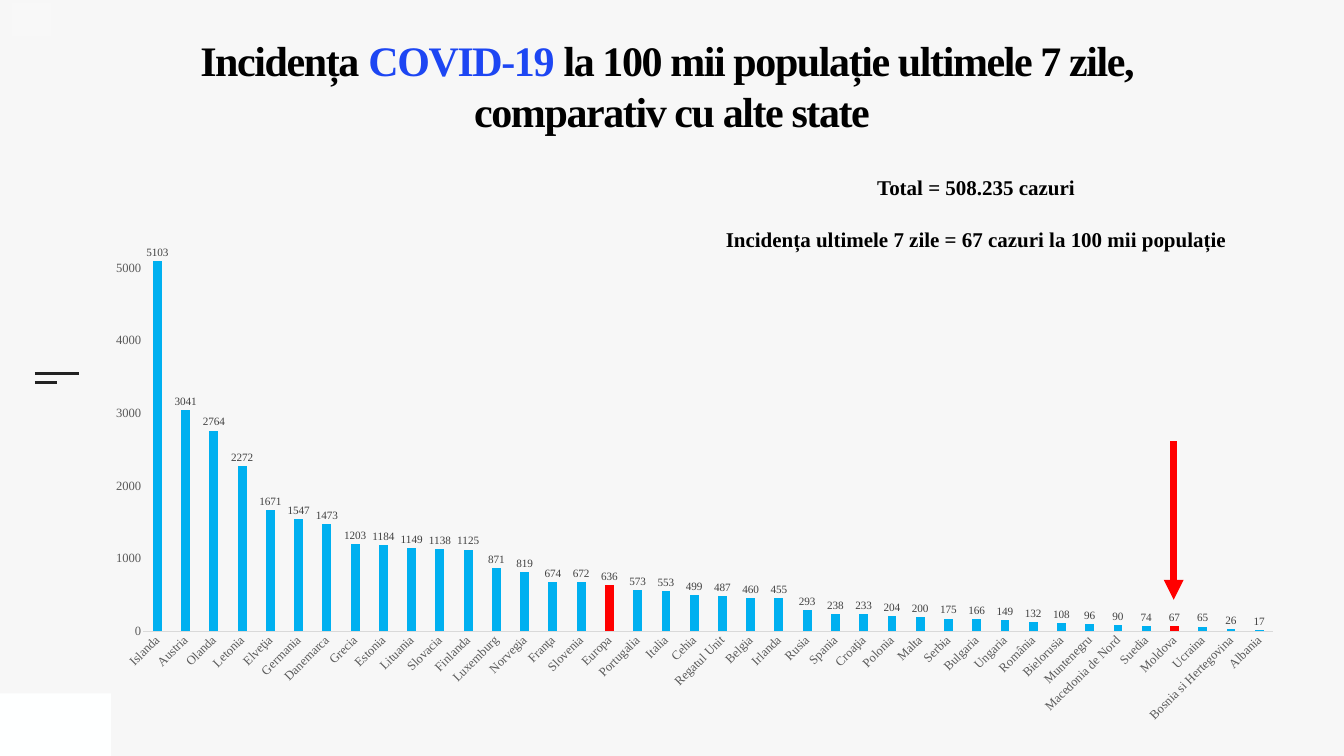
from lxml import etree
from pptx import Presentation
from pptx import util as u
from pptx.chart import data as chart_data
from pptx.dml.color import RGBColor
from pptx.enum import chart as ch, shapes, text
from pptx.oxml import parse_xml
from pptx.oxml.ns import nsdecls, qn

INCIDENCE = {
    "Islanda": 5103, "Austria": 3041, "Olanda": 2764, "Letonia": 2272,
    "Elveţia": 1671, "Germania": 1547, "Danemarca": 1473, "Grecia": 1203,
    "Estonia": 1184, "Lituania": 1149, "Slovacia": 1138, "Finlanda": 1125,
    "Luxemburg": 871, "Norvegia": 819, "Franţa": 674, "Slovenia": 672,
    "Europa": 636, "Portugalia": 573, "Italia": 553, "Cehia": 499,
    "Regatul Unit": 487, "Belgia": 460, "Irlanda": 455, "Rusia": 293,
    "Spania": 238, "Croaţia": 233, "Polonia": 204, "Malta": 200,
    "Serbia": 175, "Bulgaria": 166, "Ungaria": 149, "România": 132,
    "Bielorusia": 108, "Muntenegru": 96, "Macedonia de Nord": 90,
    "Suedia": 74, "Moldova": 67, "Ucraina": 65,
    "Bosnia si Hertegovina": 26, "Albania": 17,
}
HIGHLIGHTED = ("Europa", "Moldova")


def color(value):
    return RGBColor.from_string(value)


class SlideBuilder:
    font_name = "Times New Roman"
    black, blue, red, bar_blue = "000000", "1D46F3", "FF0000", "00B0F0"

    def __init__(self, slide, background):
        self.slide = slide
        fill = slide.background.fill
        fill.solid()
        fill.fore_color.rgb = color(background)

    def style(self, font, size, value, bold=False):
        font.name = self.font_name
        font.size = u.Pt(size)
        font.bold = bold
        font.color.rgb = color(value)

    def rectangle(self, left, top, width, height, fill):
        box = self.slide.shapes.add_shape(
            shapes.MSO_SHAPE.RECTANGLE, *map(u.Inches, (left, top, width, height)))
        box.shadow.inherit = False
        box.fill.solid()
        box.fill.fore_color.rgb = color(fill)
        box.line.fill.background()

    def line(self, start, end, value, width, arrow=False):
        connector = self.slide.shapes.add_connector(
            shapes.MSO_CONNECTOR.STRAIGHT, *map(u.Inches, (*start, *end)))
        connector.line.color.rgb = color(value)
        connector.line.width = u.Pt(width)
        if arrow:
            outline = connector.line._get_or_add_ln()
            etree.SubElement(outline, qn("a:tailEnd"), type="triangle")
        etree.SubElement(connector._element.spPr, qn("a:effectLst"))

    def text_box(self, left, top, width, height, paragraphs, size, margin=0,
                 anchor=text.MSO_ANCHOR.TOP, spacing=None, gap=0, tracking=0):
        box = self.slide.shapes.add_textbox(*map(u.Inches, (left, top, width, height)))
        frame = box.text_frame
        frame.word_wrap = True
        frame.vertical_anchor = anchor
        frame.margin_left = frame.margin_right = u.Inches(margin)
        frame.margin_top = frame.margin_bottom = u.Inches(margin)
        for index, lines in enumerate(paragraphs):
            para = frame.add_paragraph() if index else frame.paragraphs[0]
            para.alignment = text.PP_ALIGN.CENTER
            if spacing:
                para.line_spacing = u.Pt(spacing)
            if index:
                para.space_before = u.Pt(gap)
            for number, spans in enumerate(lines):
                if number:
                    para.add_line_break()
                for words, value in spans:
                    span = para.add_run()
                    span.text = words
                    self.style(span.font, size, value, bold=True)
                    if tracking:
                        span.font._element.set("spc", str(tracking * 100))

    def column_chart(self, left, top, width, height, values, highlighted, plot_area):
        data = chart_data.CategoryChartData(number_format="0")
        data.categories = list(values)
        data.add_series("Series 1", list(values.values()))
        chart = self.slide.shapes.add_chart(
            ch.XL_CHART_TYPE.COLUMN_CLUSTERED,
            *map(u.Inches, (left, top, width, height)), data).chart
        chart.has_legend = False
        chart.has_title = False
        self.style(chart.font, 24, self.black)

        for axis in (chart.category_axis, chart.value_axis):
            axis.has_major_gridlines = False
            axis.major_tick_mark = axis.minor_tick_mark = ch.XL_TICK_MARK.NONE
            self.style(axis.tick_labels.font, 18, "595959")
        baseline = chart.category_axis.format.line
        baseline.color.rgb = color("D9D9D9")
        baseline.width = u.Pt(0.75)
        body = chart.category_axis._element.find(qn("c:txPr")).find(qn("a:bodyPr"))
        body.set("rot", str(-45 * 60000))
        scale = chart.value_axis
        scale.minimum_scale, scale.maximum_scale, scale.major_unit = 0, 5500, 1000
        scale.tick_labels.number_format = "0"
        scale.tick_labels.number_format_is_linked = False
        scale.format.line.fill.background()

        plot = chart.plots[0]
        plot.gap_width, plot.overlap = 219, -27
        plot.vary_by_categories = False
        plot.has_data_labels = True
        labels = plot.data_labels
        labels.show_value = True
        labels.position = ch.XL_LABEL_POSITION.OUTSIDE_END
        labels.number_format, labels.number_format_is_linked = "0", False
        self.style(labels.font, 16, "404040")

        series = plot.series[0]
        series.invert_if_negative = False
        series.format.fill.solid()
        series.format.fill.fore_color.rgb = color(self.bar_blue)
        for name in highlighted:
            fill = series.points[list(values).index(name)].format.fill
            fill.solid()
            fill.fore_color.rgb = color(self.red)
        self.place_plot(chart, plot_area)

    def place_plot(self, chart, plot_area):
        settings = [("layoutTarget", "inner"), ("xMode", "edge"), ("yMode", "edge"),
                    *zip("xywh", plot_area)]
        entries = "".join(f'<c:{name} val="{value}"/>' for name, value in settings)
        layout = parse_xml(f'<c:layout {nsdecls("c")}><c:manualLayout>{entries}'
                           '</c:manualLayout></c:layout>')
        area = chart._chartSpace.chart.plotArea
        for previous in area.findall(qn("c:layout")):
            area.remove(previous)
        area.insert(0, layout)


def main():
    deck = Presentation()
    deck.slide_width, deck.slide_height = u.Inches(26.67), u.Inches(15)
    page = SlideBuilder(deck.slides.add_slide(deck.slide_layouts[6]), "F7F7F7")

    page.rectangle(0, 13.76, 2.2, 1.24, "FEFFFF")
    for y, right in ((7.41, 1.57), (7.59, 1.13)):
        page.line((0.69, y), (right, y), "222222", 3)

    page.column_chart(1.25, 4.29, 24.89, 10.71, INCIDENCE, HIGHLIGHTED,
                      (0.064, 0.029, 0.901, 0.74))

    title = [
        [("Incidența ", page.black), ("COVID-19", page.blue),
         (" la 100 mii populație ultimele 7 zile, ", page.black)],
        [("comparativ cu alte state", page.black)],
    ]
    page.text_box(0, 0.67, 26.67, 1.58, [title], 60, spacing=73, tracking=-2)
    page.line((23.29, 8.75), (23.29, 11.9), page.red, 9.5, arrow=True)

    summary = ("Total = 508.235 cazuri",
               "Incidența ultimele 7 zile = 67 cazuri la 100 mii populație")
    page.text_box(13.33, 3.42, 12.08, 1.63,
                  [[[(words, page.black)]] for words in summary], 30,
                  margin=0.06, anchor=text.MSO_ANCHOR.MIDDLE, gap=38)
    page.rectangle(0.23, 0.06, 0.79, 0.67, "F8F8F8")
    deck.save("out.pptx")


if __name__ == "__main__":
    main()
